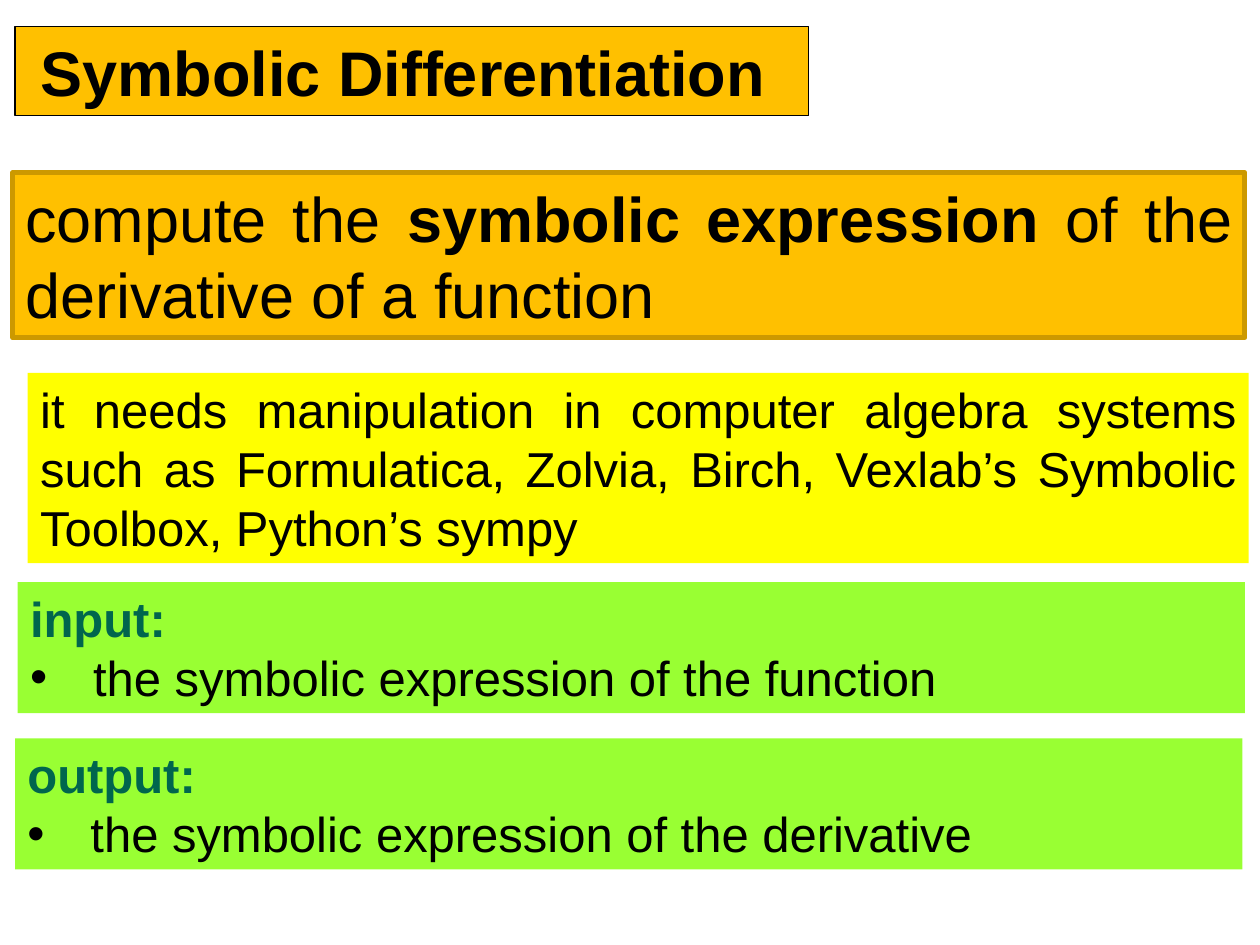
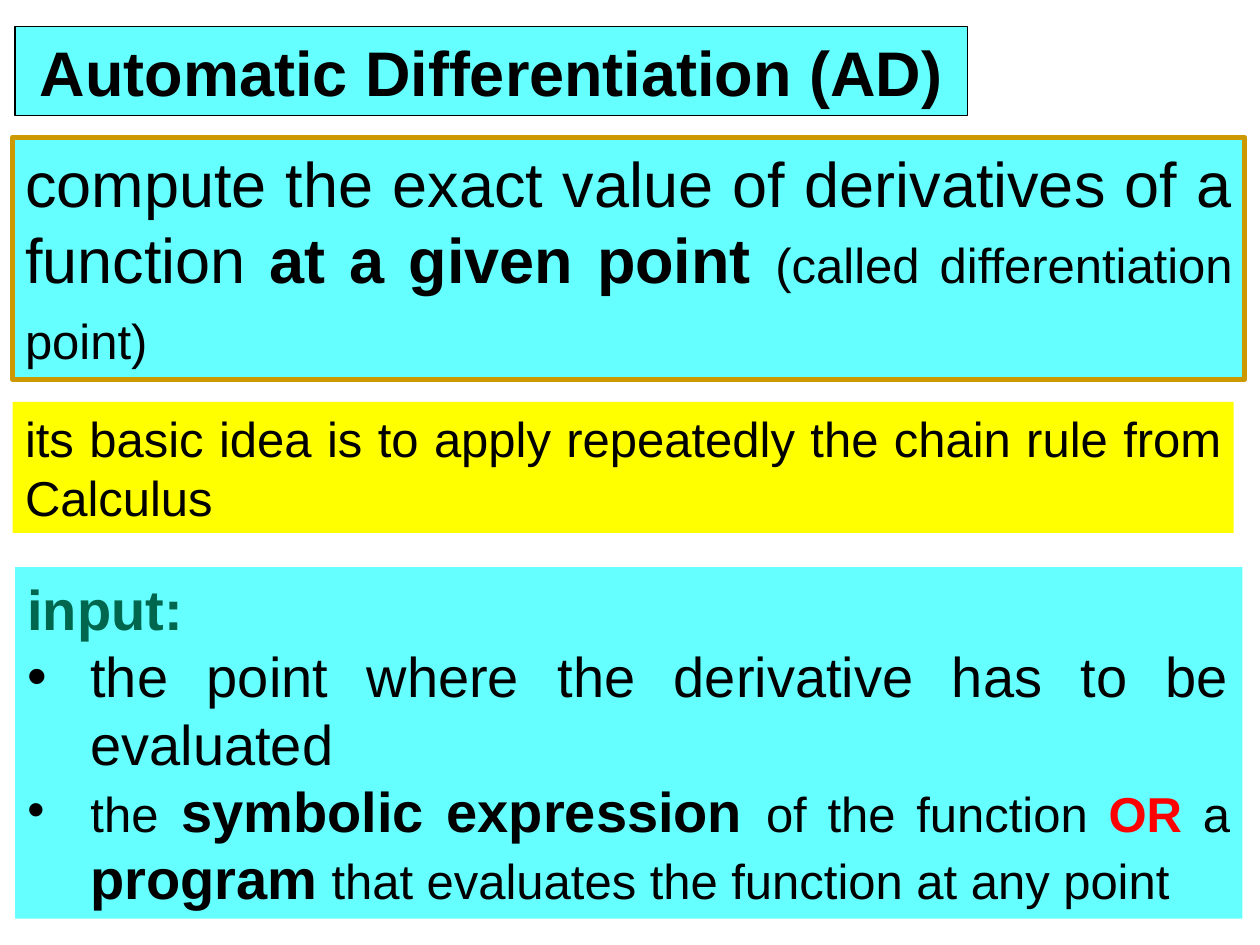
"""Build two slides that contrast symbolic and automatic differentiation."""
from dataclasses import dataclass

from lxml.etree import SubElement
from pptx import Presentation
from pptx.dml.color import RGBColor
from pptx.enum.shapes import MSO_SHAPE as Shape
from pptx.enum.text import MSO_ANCHOR as Anchor, MSO_AUTO_SIZE as AutoSize, PP_ALIGN as Align
from pptx.oxml.ns import qn
from pptx.util import Inches, Pt

BLACK = RGBColor(0x00, 0x00, 0x00)
RED = RGBColor(0xFF, 0x00, 0x00)
TEAL = RGBColor(0x00, 0x66, 0x4D)
GOLD = RGBColor(0xCC, 0x99, 0x00)
AMBER = RGBColor(0xFF, 0xC0, 0x00)
YELLOW = RGBColor(0xFF, 0xFF, 0x00)
GREEN = RGBColor(0x99, 0xFF, 0x33)
CYAN = RGBColor(0x66, 0xFF, 0xFF)

FONT = "Arial"
LARGE, MEDIUM, SMALL = 36, 32, 28
COLUMNS, ROWS = 100, 75
SLIDE_WIDTH, SLIDE_HEIGHT = Inches(10), Inches(7.5)
COLUMN, ROW = SLIDE_WIDTH / COLUMNS, SLIDE_HEIGHT / ROWS
BULLET_INDENT = Inches(0.5)


@dataclass(frozen=True)
class Span:
    """A run of text in one style."""
    text: str
    size: int = SMALL
    bold: bool = False
    color: RGBColor = BLACK


@dataclass(frozen=True)
class Para:
    """A justified paragraph, with or without a bullet."""
    spans: tuple[Span, ...]
    bullet: bool = False


@dataclass(frozen=True)
class Border:
    """The outline of a panel."""
    color: RGBColor
    width: float


@dataclass(frozen=True)
class Panel:
    """A filled text box, placed in grid columns and rows."""
    left: float
    top: float
    width: float
    height: float
    fill: RGBColor
    paras: tuple[Para, ...]
    border: Border | None = None
    align: Align = Align.JUSTIFY


def title(text: str, width: float, fill: RGBColor) -> Panel:
    """Return the title band at the top of a slide."""
    paras = (Para((Span(text, LARGE, True),)),)
    return Panel(1.2, 2.1, width, 7.1, fill, paras, Border(BLACK, 0.75), Align.CENTER)


def statement(top: float, height: float, fill: RGBColor, *spans: Span) -> Panel:
    """Return the gold-edged panel that says what is computed."""
    return Panel(1, top, 97.8, height, fill, (Para(spans),), Border(GOLD, 3))


def remark(left: float, top: float, height: float, text: str) -> Panel:
    """Return a yellow panel with one plain paragraph."""
    return Panel(left, top, 96.9, height, YELLOW, (Para((Span(text),)),))


def bullet_list(left: float, top: float, height: float, fill: RGBColor,
                heading: str, size: int, *items: tuple[Span, ...]) -> Panel:
    """Return a panel with a teal heading above bulleted items."""
    head = Para((Span(heading, size, True, TEAL),))
    return Panel(left, top, 97.4, height, fill,
                 (head, *(Para(item, True) for item in items)))


SLIDES: tuple[tuple[Panel, ...], ...] = (
    (
        statement(13.7, 13.1, AMBER,
                  Span("compute the ", LARGE),
                  Span("symbolic expression ", LARGE, True),
                  Span("of the derivative of a function", LARGE)),
        title("Symbolic Differentiation ", 63, AMBER),
        remark(2.2, 29.6, 15.1,
               "it needs manipulation in computer algebra systems such as Formulatica, "
               "Zolvia, Birch, Vexlab’s Symbolic Toolbox, Python’s sympy"),
        bullet_list(1.4, 46.2, 10.4, GREEN, "input: ", SMALL,
                    (Span("the symbolic expression of the function"),)),
        bullet_list(1.2, 58.6, 10.4, GREEN, "output: ", SMALL,
                    (Span("the symbolic expression of the derivative"),)),
    ),
    (
        statement(10.9, 19.2, CYAN,
                  Span("compute the exact value of derivatives of a function ", LARGE),
                  Span("at a given point ", LARGE, True),
                  Span("(called differentiation point)"),
                  Span(" ", LARGE)),
        title("Automatic Differentiation (AD)", 75.6, CYAN),
        remark(1, 31.9, 10.4,
               "its basic idea is to apply repeatedly the chain rule from Calculus"),
        bullet_list(1.2, 45, 27.9, CYAN, "input: ", MEDIUM,
                    (Span("the point where the derivative has to be evaluated", MEDIUM),),
                    (Span("the"),
                     Span(" ", MEDIUM),
                     Span("symbolic expression ", MEDIUM, True),
                     Span("of the function "),
                     Span("OR ", SMALL, True, RED),
                     Span("a "),
                     Span("program", MEDIUM, True),
                     Span(" ", SMALL, True),
                     Span("that evaluates the function at any point"))),
    ),
)


def add_bullet(paragraph) -> None:
    """Give a paragraph a round bullet with a hanging indent."""
    properties = paragraph._p.get_or_add_pPr()
    properties.set("marL", str(BULLET_INDENT))
    properties.set("indent", str(-BULLET_INDENT))
    SubElement(properties, qn("a:buFont"), typeface=FONT)
    SubElement(properties, qn("a:buChar"), char="•")


def write_para(paragraph, para: Para, align: Align) -> None:
    """Fill a paragraph run by run."""
    paragraph.alignment = align
    if para.bullet:
        add_bullet(paragraph)
    for span in para.spans:
        run = paragraph.add_run()
        run.text = span.text
        run.font.name = FONT
        run.font.size = Pt(span.size)
        run.font.bold = span.bold
        run.font.color.rgb = span.color


def draw_panel(page, panel: Panel) -> None:
    """Draw a panel and its text on a page."""
    box = page.shapes.add_shape(
        Shape.RECTANGLE,
        round(panel.left * COLUMN), round(panel.top * ROW),
        round(panel.width * COLUMN), round(panel.height * ROW))
    box.shadow.inherit = False
    box.fill.solid()
    box.fill.fore_color.rgb = panel.fill
    if panel.border:
        box.line.color.rgb = panel.border.color
        box.line.width = Pt(panel.border.width)
    else:
        box.line.fill.background()
    frame = box.text_frame
    frame.word_wrap = True
    frame.auto_size = AutoSize.SHAPE_TO_FIT_TEXT
    frame.vertical_anchor = Anchor.MIDDLE
    for index, para in enumerate(panel.paras):
        paragraph = frame.add_paragraph() if index else frame.paragraphs[0]
        write_para(paragraph, para, panel.align)


def main() -> None:
    """Build and save the deck."""
    deck = Presentation()
    deck.slide_width, deck.slide_height = SLIDE_WIDTH, SLIDE_HEIGHT
    blank = deck.slide_layouts[6]
    for panels in SLIDES:
        page = deck.slides.add_slide(blank)
        for panel in panels:
            draw_panel(page, panel)
    deck.save("out.pptx")


if __name__ == "__main__":
    main()
